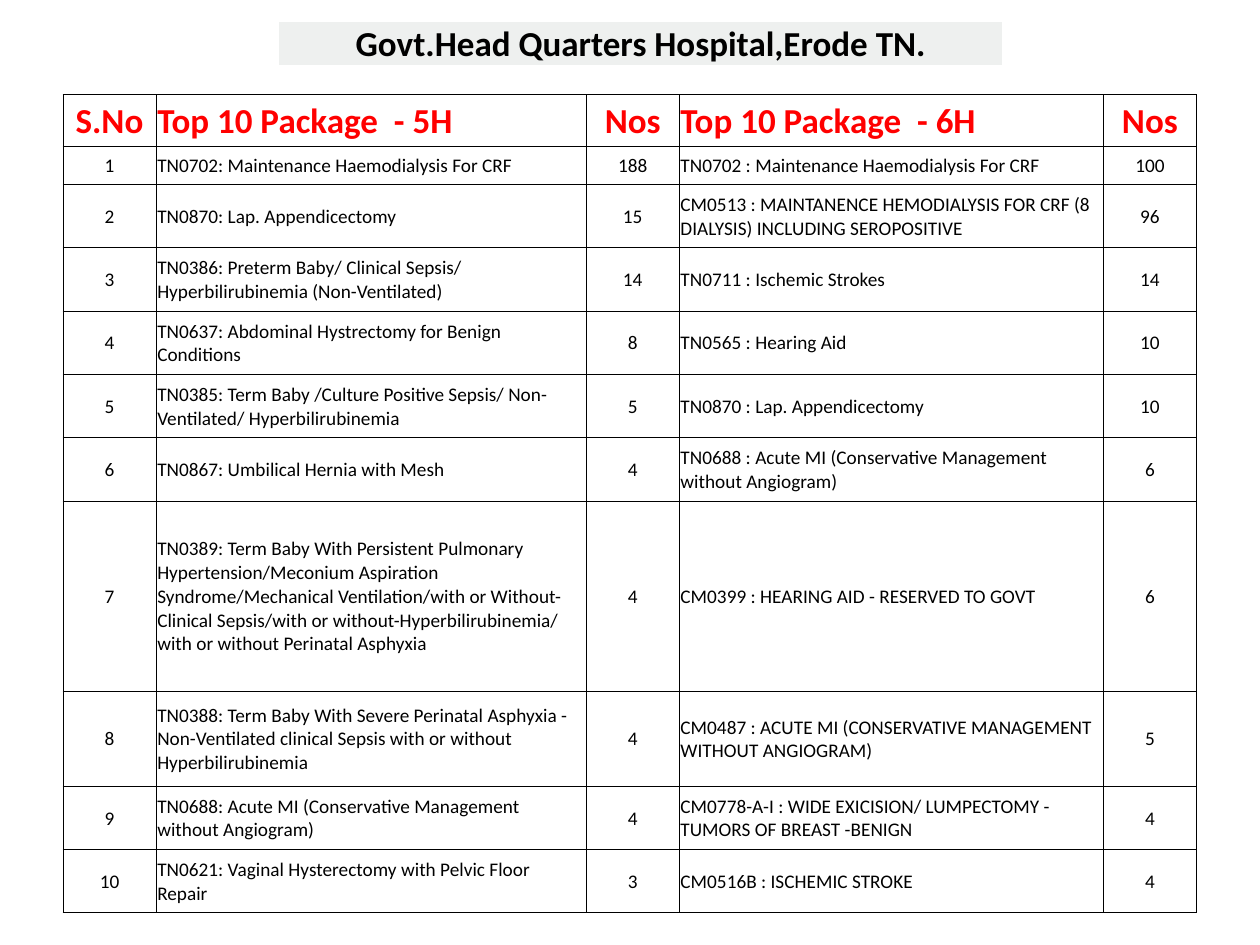
from pptx import Presentation
from pptx.dml.color import RGBColor
from pptx.enum.text import MSO_ANCHOR as Anchor, PP_ALIGN as Align
from pptx.oxml import parse_xml
from pptx.oxml.ns import nsdecls
from pptx.util import Pt

BLACK = RGBColor(0x00, 0x00, 0x00)
WHITE = RGBColor(0xFF, 0xFF, 0xFF)
RED = RGBColor(0xFF, 0x00, 0x00)
PALE_GREY = RGBColor(0xEE, 0xF0, 0xEF)

HOSPITAL = "Govt.Head Quarters Hospital,Erode TN."
HEADINGS = ("S.No", "Top 10 Package  - 5H", "Nos", "Top 10 Package  - 6H", "Nos")
PACKAGES = [
    ("TN0702: Maintenance Haemodialysis For CRF", 188,
     "TN0702 : Maintenance Haemodialysis For CRF", 100),
    ("TN0870: Lap. Appendicectomy", 15,
     "CM0513 : MAINTANENCE HEMODIALYSIS FOR CRF (8 DIALYSIS) INCLUDING SEROPOSITIVE", 96),
    ("TN0386: Preterm Baby/ Clinical Sepsis/ Hyperbilirubinemia (Non-Ventilated)", 14,
     "TN0711 : Ischemic Strokes", 14),
    ("TN0637: Abdominal Hystrectomy for Benign Conditions", 8,
     "TN0565 : Hearing Aid", 10),
    ("TN0385: Term Baby /Culture Positive Sepsis/ Non-Ventilated/ Hyperbilirubinemia", 5,
     "TN0870 : Lap. Appendicectomy", 10),
    ("TN0867: Umbilical Hernia with Mesh", 4,
     "TN0688 : Acute MI (Conservative Management without Angiogram)", 6),
    ("TN0389: Term Baby With Persistent Pulmonary Hypertension/Meconium Aspiration "
     "Syndrome/Mechanical Ventilation/with or Without- Clinical Sepsis/with or "
     "without-Hyperbilirubinemia/ with or without Perinatal Asphyxia", 4,
     "CM0399 : HEARING AID - RESERVED TO GOVT", 6),
    ("TN0388: Term Baby With Severe Perinatal Asphyxia - Non-Ventilated clinical Sepsis "
     "with or without Hyperbilirubinemia", 4,
     "CM0487 : ACUTE MI (CONSERVATIVE MANAGEMENT WITHOUT ANGIOGRAM)", 5),
    ("TN0688: Acute MI (Conservative Management without Angiogram)", 4,
     "CM0778-A-I : WIDE EXICISION/ LUMPECTOMY - TUMORS OF BREAST -BENIGN", 4),
    ("TN0621: Vaginal Hysterectomy with Pelvic Floor Repair", 3,
     "CM0516B : ISCHEMIC STROKE", 4),
]
COLUMN_WIDTHS = (53.2, 245.8, 53.2, 242.2, 53.6)
ROW_HEIGHTS = (29.7, 21.7, *[36.2] * 5, 108.6, 54.3, *[36.2] * 2)


def write(frame, text, size=11, color=BLACK, bold=False, align=Align.LEFT):
    paragraph = frame.paragraphs[0]
    paragraph.alignment = align
    run = paragraph.add_run()
    run.text = text
    run.font.name = "Calibri"
    run.font.size = Pt(size)
    run.font.bold = bold
    run.font.color.rgb = color


class Sheet:
    """Holds the table style and the slide being filled."""

    inset = 0.7

    def __init__(self, slide):
        self.slide = slide

    def table(self, left, top, widths, heights):
        frame = self.slide.shapes.add_table(
            len(heights), len(widths), Pt(left), Pt(top), Pt(sum(widths)), Pt(sum(heights)))
        grid = frame.table
        grid.first_row = grid.horz_banding = False
        for column, width in zip(grid.columns, widths):
            column.width = Pt(width)
        for row, height in zip(grid.rows, heights):
            row.height = Pt(height)
        return grid

    def cell(self, cell, text, fill=WHITE, border=BLACK, weight=0.5,
             anchor=Anchor.MIDDLE, **style):
        cell.margin_left = cell.margin_right = cell.margin_top = Pt(self.inset)
        cell.margin_bottom = Pt(0)
        cell.vertical_anchor = anchor
        cell.fill.solid()
        cell.fill.fore_color.rgb = fill
        properties = cell._tc.get_or_add_tcPr()
        for position, side in enumerate("LRTB"):
            properties.insert(position, parse_xml(
                f'<a:ln{side} {nsdecls("a")} w="{Pt(weight)}"><a:solidFill>'
                f'<a:srgbClr val="{border}"/></a:solidFill></a:ln{side}>'))
        write(cell.text_frame, text, **style)


def main():
    deck = Presentation()
    deck.slide_width, deck.slide_height = Pt(720), Pt(540)
    sheet = Sheet(deck.slides.add_slide(deck.slide_layouts[6]))

    banner = sheet.table(159.2, 12.4, [414], [24])
    sheet.cell(banner.cell(0, 0), HOSPITAL, fill=PALE_GREY, border=WHITE, weight=1,
               anchor=Anchor.BOTTOM, size=20, bold=True, align=Align.CENTER)

    ranking = sheet.table(36, 54, COLUMN_WIDTHS, ROW_HEIGHTS)
    numbered = [(number, *package) for number, package in enumerate(PACKAGES, 1)]
    for row, entries in enumerate([HEADINGS, *numbered]):
        style = {"size": 20, "color": RED, "bold": True} if row == 0 else {}
        for column, entry in enumerate(entries):
            align = Align.LEFT if column in (1, 3) else Align.CENTER
            sheet.cell(ranking.cell(row, column), str(entry), align=align, **style)

    deck.save("out.pptx")


if __name__ == "__main__":
    main()
